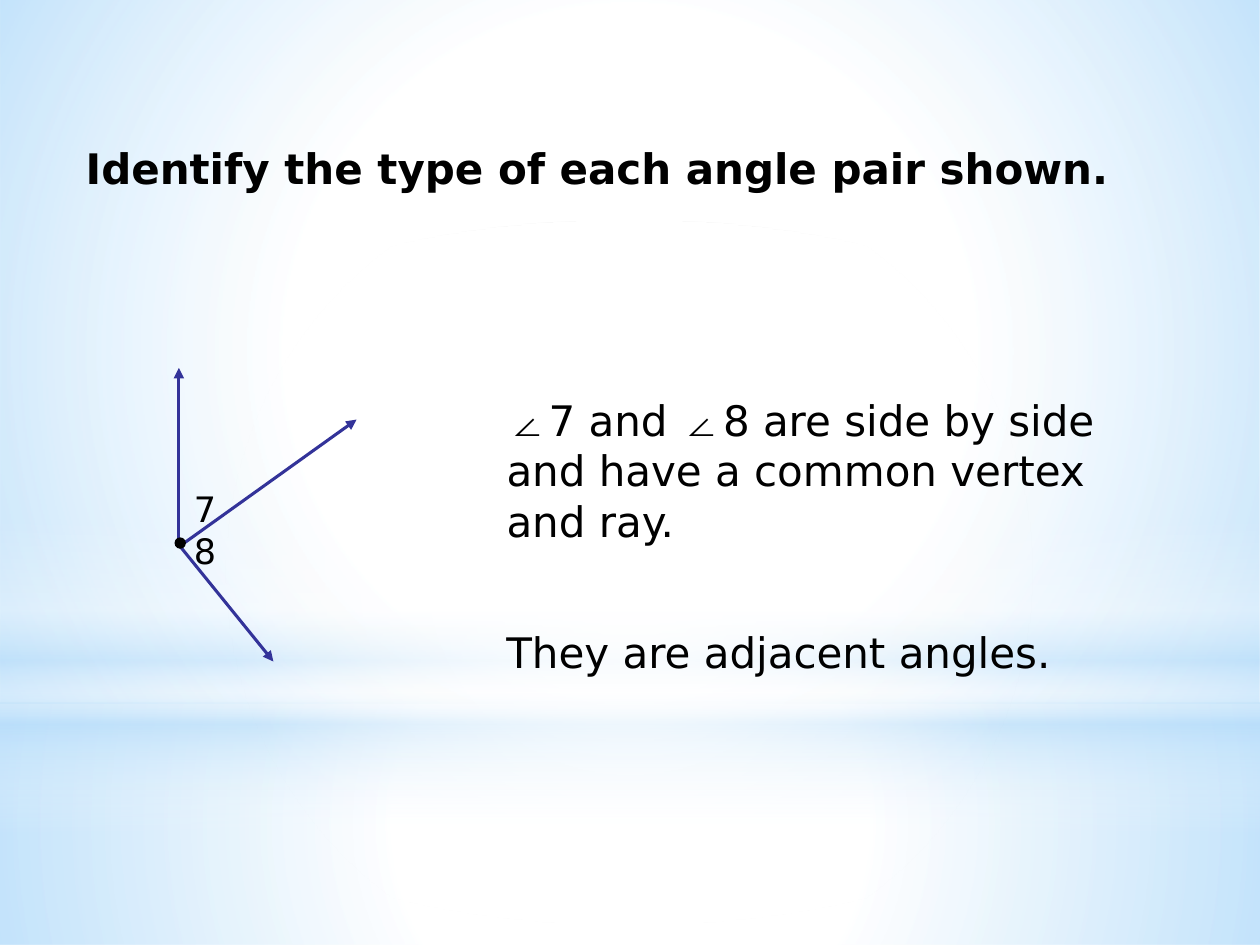
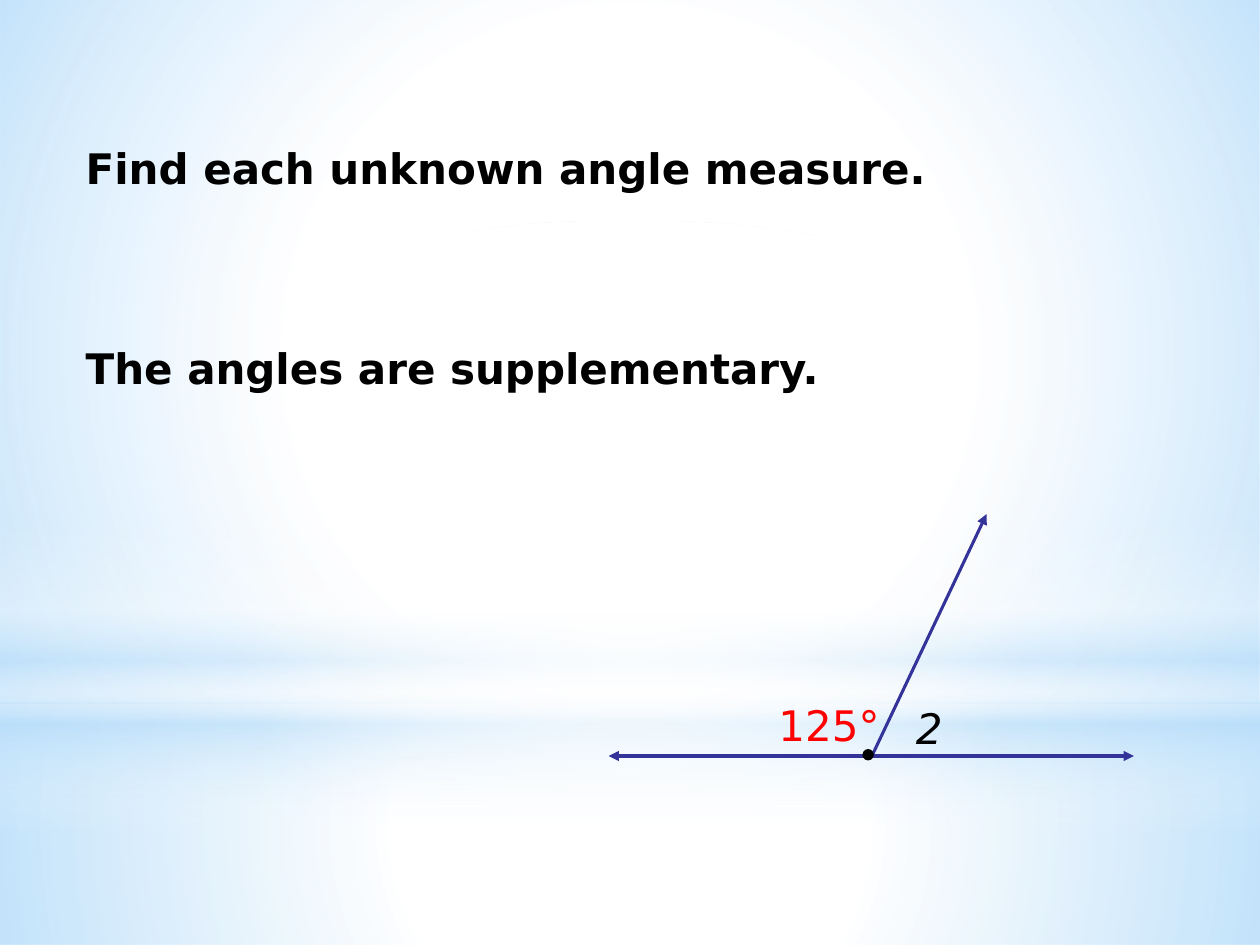
from lxml.etree import SubElement
from pptx import Presentation
from pptx.dml.color import RGBColor
from pptx.enum.shapes import MSO_CONNECTOR, MSO_SHAPE
from pptx.enum.text import MSO_ANCHOR, MSO_AUTO_SIZE, PP_ALIGN
from pptx.oxml.ns import qn
from pptx.util import Inches, Pt

WIDTH, HEIGHT = 10, 7.5
BLACK = RGBColor(0, 0, 0)
WHITE = RGBColor(0xFF, 0xFF, 0xFF)
SKY = RGBColor(0xB4, 0xDC, 0xFA)
INDIGO = RGBColor(0x33, 0x33, 0x99)
RED = RGBColor(0xFF, 0, 0)
TEXT_FONT, SYMBOL_FONT = "DejaVu Sans", "Arial"
HORIZON = 5.58
DOT = 0.08
TITLE_BOX = (0.58, 1.08, 8.75, 0.51)

# Backdrop: shape, top, height, radial or not, stops (position %, colour, opacity %)
BACKDROP = [
    (MSO_SHAPE.RECTANGLE, HORIZON, HEIGHT - HORIZON, True,
     [(0, WHITE, 91), (37, WHITE, 76), (100, SKY, 79)]),
    (MSO_SHAPE.RECTANGLE, 0, HORIZON, True,
     [(0, WHITE, 89), (48, WHITE, 62), (100, SKY, 79)]),
    (MSO_SHAPE.RECTANGLE, 4.12, 2.5, False,
     [(0, WHITE, 0), (29, WHITE, 30), (45, SKY, 40),
      (55, WHITE, 26), (65, SKY, 60), (100, WHITE, 0)]),
    (MSO_SHAPE.OVAL, 1.75, HORIZON, True, [(0, WHITE, 100), (56, WHITE, 0)]),
]

# Slides: rays run from the vertex to the arrow tip; labels are (text, box, style)
SLIDES = [
    dict(title="Identify the type of each angle pair shown.",
         body="∠7 and ∠8 are side by side and have a common vertex and ray.",
         body_box=(3.92, 3.08, 5.5, 1.3), body_style={},
         rays=[((1.42, 4.33), (1.42, 2.92)),
               ((1.42, 4.34), (2.83, 3.33)),
               ((1.4, 4.3), (2.17, 5.25))],
         dot=(1.39, 4.27),
         labels=[("They are adjacent angles.", (3.92, 4.92, 5.08, 0.5), {}),
                 ("7 8", (1.44, 3.82, 0.5, 0.77), dict(size=20))]),
    dict(title="Find each unknown angle measure.",
         body="The angles are supplementary.",
         body_box=(0.58, 2.67, 9.42, 0.5), body_style=dict(bold=True),
         rays=[((6.92, 6), tip) for tip in ((4.83, 6), (9, 6), (7.83, 4.08))],
         dot=(6.85, 5.95),
         labels=[("2", (7.17, 5.53, 0.67, 0.5), dict(italic=True)),
                 ("125°", (6.08, 5.5, 1.08, 0.5), dict(color=RED))]),
]


def inches(values):
    return [Inches(v) for v in values]


def add_gradient(sp, radial, stops):
    grad = sp.element.spPr.makeelement(qn("a:gradFill"), rotWithShape="1")
    stop_list = SubElement(grad, qn("a:gsLst"))
    for position, color, opacity in stops:
        gs = SubElement(stop_list, qn("a:gs"), pos=str(position * 1000))
        clr = SubElement(gs, qn("a:srgbClr"), val=str(color))
        SubElement(clr, qn("a:alpha"), val=str(opacity * 1000))
    if radial:
        center = SubElement(grad, qn("a:path"), path="circle")
        SubElement(center, qn("a:fillToRect"), dict.fromkeys("ltrb", "50000"))
    else:
        SubElement(grad, qn("a:lin"), ang="5400000", scaled="0")
    sp.element.spPr.insert(2, grad)  # right after the geometry


def add_backdrop(prs, s):
    """Draw the backdrop on a slide, then move it to the master for all slides."""
    tree = prs.slide_master.shapes.element
    for i, (kind, top, height, radial, stops) in enumerate(BACKDROP):
        sp = s.shapes.add_shape(kind, *inches((0, top, WIDTH, height)))
        sp.line.fill.background()
        sp.shadow.inherit = False
        add_gradient(sp, radial, stops)
        sp.element.nvSpPr.cNvPr.set("id", str(100 + i))
        tree.insert(2 + i, sp.element)


def write(sp, text, box, size=24, color=BLACK, bold=False, italic=False):
    sp.left, sp.top, sp.width, sp.height = inches(box)
    tf = sp.text_frame
    tf.word_wrap = True
    tf.auto_size = MSO_AUTO_SIZE.NONE
    tf.vertical_anchor = MSO_ANCHOR.TOP
    p = tf.paragraphs[0]
    p.alignment = PP_ALIGN.LEFT
    p.space_before = Pt(0)
    font = p.font
    font.size, font.bold, font.italic = Pt(size), bold, italic
    font.color.rgb = color
    # The angle sign has its own font
    for i, part in enumerate(text.split("∠")):
        pieces = [("∠", SYMBOL_FONT)] if i else []
        for piece, name in pieces + [(part, TEXT_FONT)]:
            if piece:
                r = p.add_run()
                r.text = piece
                f = r.font
                f.name, f.size, f.bold, f.italic = name, Pt(size), bold, italic
                f.color.rgb = color
    return p


def remove_bullet(p):
    pPr = p._p.get_or_add_pPr()
    pPr.set("marL", "0")
    pPr.set("indent", "0")
    bullet = pPr.makeelement(qn("a:buNone"))
    pPr.insert_element_before(bullet, "a:tabLst", "a:defRPr", "a:extLst")


def add_ray(s, vertex, tip):
    ray = s.shapes.add_connector(MSO_CONNECTOR.STRAIGHT, *inches(vertex + tip))
    ray.line.color.rgb = INDIGO
    ray.line.width = Pt(1.75)
    SubElement(ray.line._get_or_add_ln(), qn("a:tailEnd"), type="triangle")
    SubElement(ray._element.spPr, qn("a:effectLst"))


def add_dot(s, corner):
    dot = s.shapes.add_shape(MSO_SHAPE.OVAL, *inches(corner + (DOT, DOT)))
    dot.shadow.inherit = False
    dot.fill.solid()
    dot.fill.fore_color.rgb = BLACK
    dot.line.color.rgb = BLACK
    dot.line.width = Pt(0.75)


def main():
    prs = Presentation()
    prs.slide_width, prs.slide_height = inches((WIDTH, HEIGHT))
    for i, content in enumerate(SLIDES):
        s = prs.slides.add_slide(prs.slide_layouts[1])
        if i == 0:
            add_backdrop(prs, s)
        write(s.shapes.title, content["title"], TITLE_BOX, bold=True)
        p = write(s.placeholders[1], content["body"], content["body_box"],
                  **content["body_style"])
        remove_bullet(p)
        # Angle figure and its labels
        for vertex, tip in content["rays"]:
            add_ray(s, vertex, tip)
        for text, box, style in content["labels"]:
            write(s.shapes.add_textbox(*inches(box)), text, box, **style)
        add_dot(s, content["dot"])
    prs.save("out.pptx")


if __name__ == "__main__":
    main()
